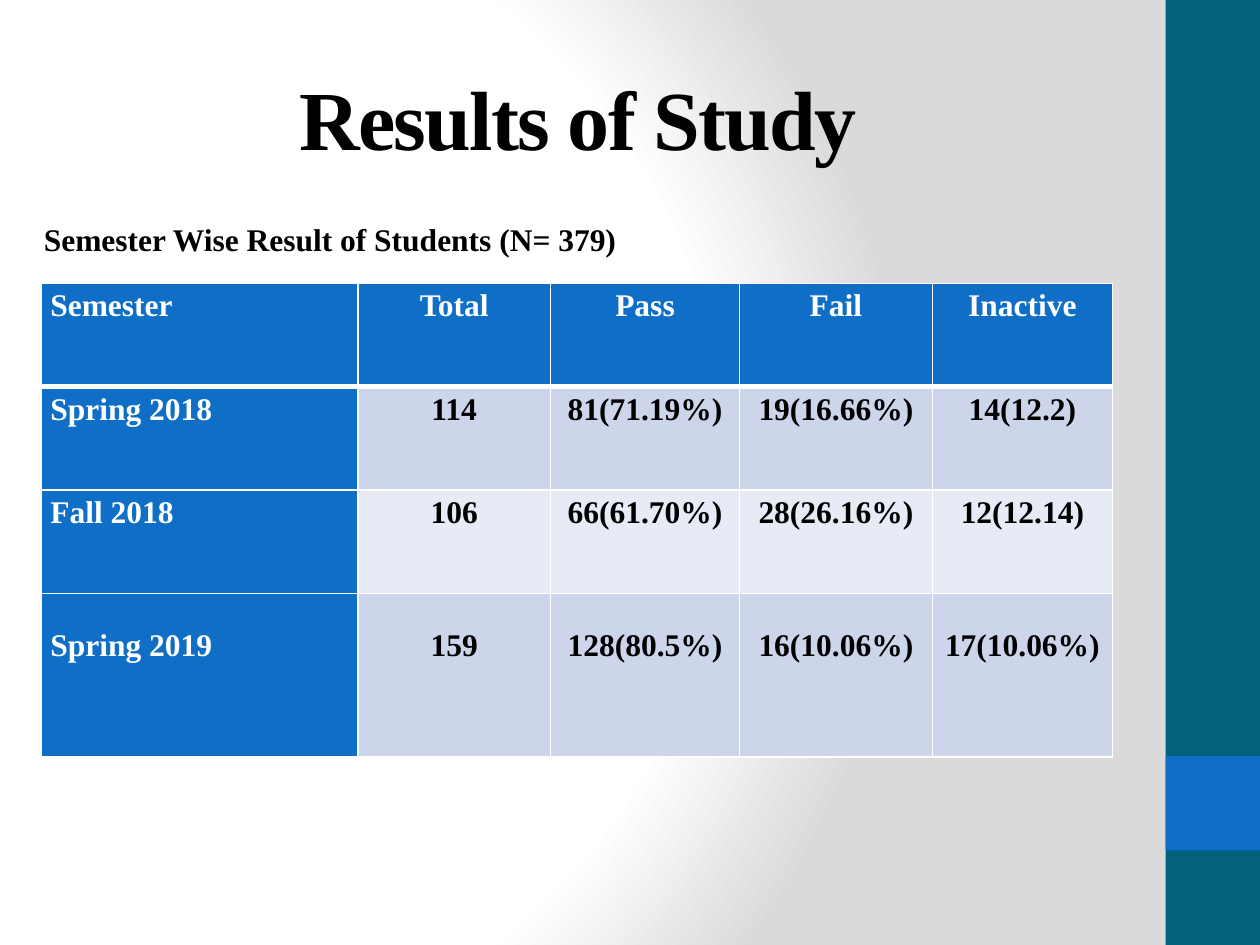
from pptx import Presentation
from pptx.dml.color import RGBColor as RGB
from pptx.enum.shapes import MSO_SHAPE as Shape
from pptx.enum.text import MSO_ANCHOR as Anchor, PP_ALIGN as Align
from pptx.oxml import parse_xml
from pptx.oxml.ns import nsdecls
from pptx.util import Inches, Pt

INK = {"teal": "04617B", "blue": "0F6FC6", "band": "CCD5EA", "pale": "E7EBF5",
       "white": "FFFFFF", "grey": "DADADA", "black": "000000"}
COLS = [2.51, 1.53, 1.5, 1.53, 1.43]
ROWS = [0.82, 0.82, 0.82, 1.3]
DATA = [
    ["Semester ", "Total", "Pass", "Fail", "Inactive"],
    ["Spring 2018", "114", "81(71.19%)", "19(16.66%)", "14(12.2)"],
    ["Fall 2018", "106", "66(61.70%)", "28(26.16%)", "12(12.14)"],
    ["Spring 2019", "159", "128(80.5%)", "16(10.06%)", "17(10.06%)"],
]


def write(frame, text, size=18, color="black", align=Align.LEFT, line=None, after=None, track=None):
    par = frame.paragraphs[0]
    par.alignment, par.line_spacing = align, line
    if after is not None:
        par.space_after = Pt(after)
    run = par.add_run()
    run.text = text
    font = run.font
    font.name, font.size, font.bold = "Times New Roman", Pt(size), True
    font.color.rgb = RGB.from_string(INK[color])
    if track:
        run._r.get_or_add_rPr().set("spc", str(track))


def paint(slide):
    stops = "".join(f'<a:gs pos="{pos}000"><a:srgbClr val="{INK[key]}"/></a:gs>'
                    for pos, key in [(0, "white"), (75, "white"), (100, "grey")])
    slide.element.cSld.insert(0, parse_xml(
        f'<p:bg {nsdecls("p", "a")}><p:bgPr><a:gradFill rotWithShape="1">'
        f'<a:gsLst>{stops}</a:gsLst><a:path path="circle">'
        '<a:fillToRect l="20000" t="50000" r="100000" b="50000"/></a:path>'
        '</a:gradFill><a:effectLst/></p:bgPr></p:bg>'))


def block(slide, left, top, width, height, color):
    box = slide.shapes.add_shape(Shape.RECTANGLE, Inches(left), Inches(top),
                                 Inches(width), Inches(height))
    box.shadow.inherit = False
    box.fill.solid()
    box.fill.fore_color.rgb = RGB.from_string(INK[color])
    box.line.fill.background()


def side(slide, left, top, width, height):
    block(slide, left, top, width, height, "teal")
    block(slide, left, top + height * 0.8, width, width, "blue")


def head(slide, left, top, width, height):
    title = slide.shapes.title
    title.left, title.top = Inches(left), Inches(top)
    title.width, title.height = Inches(width), Inches(height)
    title.text_frame.vertical_anchor = Anchor.MIDDLE
    write(title.text_frame, "Results of Study ", size=48, align=Align.CENTER, track=-100)


def label(slide, left, top, width, height):
    box = slide.shapes.add_textbox(Inches(left), Inches(top), Inches(width), Inches(height))
    box.text_frame.word_wrap = True
    box.text_frame.vertical_anchor = Anchor.MIDDLE
    write(box.text_frame, "Semester Wise Result of Students (N= 379)")


def edge(cell, row):
    props = cell._tc.get_or_add_tcPr()
    wide = {"T": 3 if row == 1 else 1, "B": 3 if row == 0 else 1}
    for spot, name in enumerate("LRTB"):
        props.insert(spot, parse_xml(
            f'<a:ln{name} {nsdecls("a")} w="{Pt(wide.get(name, 1))}"><a:solidFill>'
            f'<a:srgbClr val="{INK["white"]}"/></a:solidFill></a:ln{name}>'))


def grid(slide, left, top, width, height):
    table = slide.shapes.add_table(len(ROWS), len(COLS), Inches(left), Inches(top),
                                   Inches(width), Inches(height)).table
    table.first_col = True
    for col, size in zip(table.columns, COLS):
        col.width = Inches(size)
    for row, size in zip(table.rows, ROWS):
        row.height = Inches(size)
    for r, texts in enumerate(DATA):
        for c, text in enumerate(texts):
            cell = table.cell(r, c)
            key = r == 0 or c == 0
            fill = "blue" if key else "band" if r % 2 else "pale"
            cell.fill.solid()
            cell.fill.fore_color.rgb = RGB.from_string(INK[fill])
            cell.margin_left = cell.margin_right = Inches(0.07)
            cell.margin_top = cell.margin_bottom = 0
            edge(cell, r)
            write(cell.text_frame, text, color="white" if key else "black",
                  align=Align.CENTER if c else Align.JUSTIFY,
                  line=2.0 if r == 3 else 1.15, after=10)


def main():
    deck = Presentation()
    deck.slide_width, deck.slide_height = Inches(10), Inches(7.5)
    slide = deck.slides.add_slide(deck.slide_layouts[5])
    paint(slide)
    side(slide, 9.25, 0, 0.75, 7.5)
    head(slide, 0.5, 0.3, 8.33, 1.25)
    grid(slide, 0.33, 2.25, sum(COLS), sum(ROWS))
    label(slide, 0.25, 1.7, 10.93, 0.4)
    deck.save("out.pptx")


if __name__ == "__main__":
    main()
